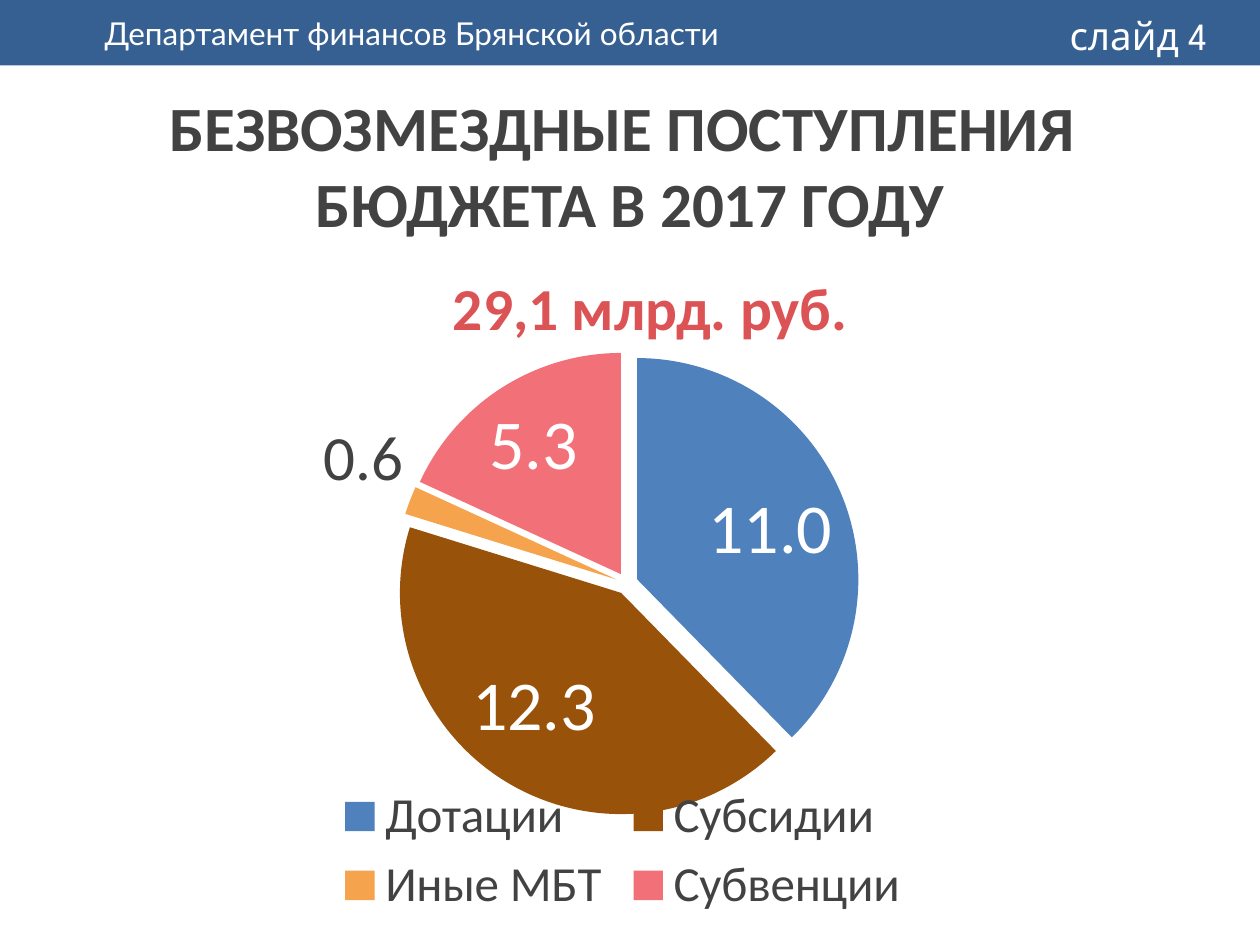
from dataclasses import dataclass

from lxml import etree
from pptx import Presentation
from pptx.chart.data import CategoryChartData
from pptx.dml.color import RGBColor
from pptx.enum import chart as charts, shapes, text
from pptx.oxml import parse_xml
from pptx.oxml.ns import nsdecls, qn
from pptx.util import Inches, Pt


@dataclass(frozen=True)
class Theme:
    white: str = "FFFFFF"
    ink: str = "424242"
    band: str = "376092"
    accent: str = "DC5356"
    slices: tuple = ("4F81BD", "985209", "F5A34D", "F27078")
    body_font: str = "Calibri"
    header_font: str = "Lato"
    number_font: str = "League Spartan"
    header_size: int = 18
    number_size: int = 22
    legend_size: int = 28
    total_size: int = 34
    title_size: int = 36
    small_label_size: int = 36
    label_size: int = 40


THEME = Theme()


def style_font(font, size, color, name=THEME.body_font, bold=False):
    font.size, font.name, font.bold = Pt(size), name, bold
    font.color.rgb = RGBColor.from_string(color)


def add_run(paragraph, words, *style, **options):
    run = paragraph.add_run()
    run.text = words
    style_font(run.font, *style, **options)
    return run


def add_text_box(slide, box, align=text.PP_ALIGN.LEFT, anchor=text.MSO_ANCHOR.TOP):
    """Add a wrapping text box and return its first paragraph."""
    frame = slide.shapes.add_textbox(*map(Inches, box)).text_frame
    frame.word_wrap = True
    frame.vertical_anchor = anchor
    paragraph = frame.paragraphs[0]
    paragraph.alignment = align
    return paragraph


def add_header(slide, box):
    left, top, width, height = box
    band = slide.shapes.add_shape(shapes.MSO_SHAPE.RECTANGLE, *map(Inches, box))
    band.shadow.inherit = False
    band.fill.solid()
    band.fill.fore_color.rgb = RGBColor.from_string(THEME.band)
    band.line.fill.background()
    frame = band.text_frame
    frame.margin_left = Inches(0.83)
    frame.vertical_anchor = text.MSO_ANCHOR.MIDDLE
    paragraph = frame.paragraphs[0]
    paragraph.alignment = text.PP_ALIGN.LEFT
    add_run(paragraph, "Департамент финансов Брянской области",
            THEME.header_size, THEME.white, name=THEME.header_font)

    number = add_text_box(slide, (left + width - 1.61, top + 0.05, 1.5, height - 0.05))
    add_run(number, "слайд 4", THEME.number_size, THEME.white, name=THEME.number_font)


def add_title(slide, box):
    paragraph = add_text_box(slide, box, text.PP_ALIGN.CENTER, text.MSO_ANCHOR.MIDDLE)
    style = THEME.title_size, THEME.ink
    add_run(paragraph, "БЕЗВОЗМЕЗДНЫЕ ПОСТУПЛЕНИЯ ", *style, bold=True)
    paragraph.add_line_break()
    add_run(paragraph, "БЮДЖЕТА В 2017 ГОДУ", *style, bold=True)


def add_total(slide, box):
    paragraph = add_text_box(slide, box, text.PP_ALIGN.CENTER)
    run = add_run(paragraph, "29,1 млрд. руб.", THEME.total_size, THEME.accent, bold=True)
    shadow = parse_xml(
        f'<a:effectLst {nsdecls("a")}><a:outerShdw blurRad="38100" dist="38100" dir="2700000">'
        '<a:srgbClr val="000000"><a:alpha val="43000"/></a:srgbClr></a:outerShdw></a:effectLst>')
    run.font.fill._xPr.find(qn("a:solidFill")).addnext(shadow)


def set_plot_layout(chart, x, y, w, h):
    """Fix the inner plot area as fractions of the chart."""
    plot_area = chart._chartSpace.chart.plotArea
    for old in plot_area.findall(qn("c:layout")):
        plot_area.remove(old)
    layout = etree.Element(qn("c:layout"))
    manual = etree.SubElement(layout, qn("c:manualLayout"))
    settings = dict(layoutTarget="inner", xMode="edge", yMode="edge", x=x, y=y, w=w, h=h)
    for tag, value in settings.items():
        etree.SubElement(manual, qn(f"c:{tag}")).set("val", str(value))
    plot_area.insert(0, layout)


def add_income_pie(slide, box):
    data = CategoryChartData(number_format="0.0")
    data.categories = ["Дотации", "Субсидии", "Иные МБТ", "Субвенции"]
    data.add_series("Безвозмездные поступления", (11, 12.3, 0.6, 5.3))
    chart = slide.shapes.add_chart(
        charts.XL_CHART_TYPE.PIE, *map(Inches, box), data).chart
    chart.has_title = False
    style_font(chart.font, 18, THEME.ink)
    chart.has_legend = True
    chart.legend.position = charts.XL_LEGEND_POSITION.BOTTOM
    chart.legend.include_in_layout = False
    style_font(chart.legend.font, THEME.legend_size, THEME.ink)
    set_plot_layout(chart, 0.299, 0.073, 0.41, 0.751)

    plot = chart.plots[0]
    plot.vary_by_categories = True
    series = plot.series[0]
    explosion = etree.Element(qn("c:explosion"), val="5")
    series._element.find(qn("c:tx")).addnext(explosion)
    for index, color in enumerate(THEME.slices):
        fill = series.points[index].format.fill
        fill.solid()
        fill.fore_color.rgb = RGBColor.from_string(color)

    labels = series.data_labels
    labels.show_value = True
    labels.number_format, labels.number_format_is_linked = "0.0", False
    labels.position = charts.XL_LABEL_POSITION.BEST_FIT
    style_font(labels.font, THEME.label_size, THEME.white)
    small_label = series.points[2].data_label
    style_font(small_label.font, THEME.small_label_size, THEME.ink)
    small_label.position = charts.XL_LABEL_POSITION.OUTSIDE_END


def main():
    presentation = Presentation()
    presentation.slide_width, presentation.slide_height = Inches(10), Inches(7.5)
    slide = presentation.slides.add_slide(presentation.slide_layouts[6])
    add_header(slide, (0, 0, 10, 0.52))
    add_title(slide, (0.12, 0.68, 9.76, 1.25))
    add_income_pie(slide, (0.44, 2.43, 9, 4.91))
    add_total(slide, (2.64, 2.1, 5.04, 0.67))
    presentation.save("out.pptx")


if __name__ == "__main__":
    main()
